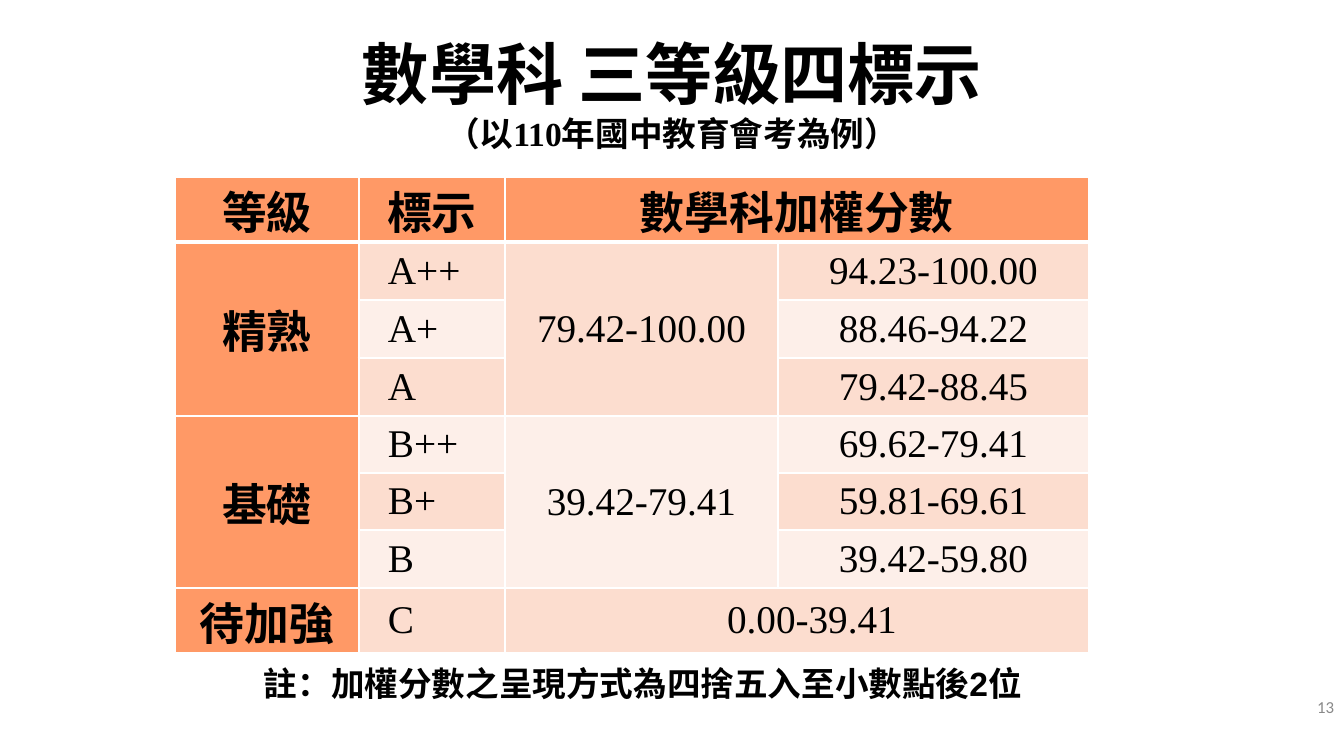
from pptx import Presentation
from pptx.dml.color import RGBColor
from pptx.enum.text import MSO_ANCHOR, MSO_AUTO_SIZE, PP_ALIGN
from pptx.oxml import parse_xml
from pptx.oxml.ns import nsdecls
from pptx.util import Emu, Pt

CJK, SERIF = "Noto Sans CJK SC", "Times New Roman"
BLACK, GREY, WHITE = "000000", "898989", "FFFFFF"
ORANGE, BANDS = "FF9966", ("FDEFE9", "FCDDCF")

TITLE = "數學科 三等級四標示"
SUBTITLE = [("（以", CJK), ("110", SERIF), ("年國中教育會考為例）", CJK)]
NOTE = "註：加權分數之呈現方式為四捨五入至小數點後2位"
PAGE_NUMBER = "13"

GRADES = [
    ["等級", "標示", "數學科加權分數", ""],
    ["精熟", "A++", "79.42-100.00", "94.23-100.00"],
    ["", "A+", "", "88.46-94.22"],
    ["", "A", "", "79.42-88.45"],
    ["基礎", "B++", "39.42-79.41", "69.62-79.41"],
    ["", "B+", "", "59.81-69.61"],
    ["", "B", "", "39.42-59.80"],
    ["待加強", "C", "0.00-39.41", ""],
]
MERGES = [  # first row, first column, last row, last column
    (0, 2, 0, 3), (1, 0, 3, 0), (1, 2, 3, 2),
    (4, 0, 6, 0), (4, 2, 6, 2), (7, 2, 7, 3),
]
COLUMN_WIDTHS = [184, 146, 273, 311]
ROW_HEIGHTS = [58, 58, 58, 58, 57, 57, 58, 58]
COLUMN_EDGES = [1, 2.25, 2.25, 1, 1]  # border widths in points
ROW_EDGES = [1, 3, 1, 1, 2.25, 1, 1, 2.25, 1]


def px(length):
    return Emu(round(length * 914400 / 100.8))


def color(value):
    return RGBColor.from_string(value)


def add_run(paragraph, text, size, font, bold=False, fill=BLACK):
    run = paragraph.add_run()
    run.text = text
    run.font.size = Pt(size)
    run.font.name = font
    run.font.bold = bold
    run.font.color.rgb = color(fill)
    run._r.get_or_add_rPr().find("{*}latin").addnext(
        parse_xml(f'<a:ea {nsdecls("a")} typeface="{CJK}"/>'))


def add_text_box(slide, left, top, width, height):
    frame = slide.shapes.add_textbox(px(left), px(top), px(width), px(height)).text_frame
    frame.word_wrap = True
    return frame


def set_borders(cell, widths):
    """Draw white borders; widths holds points for left, right, top, bottom."""
    properties = cell._tc.get_or_add_tcPr()
    for position, (side, width) in enumerate(zip("LRTB", widths)):
        properties.insert(position, parse_xml(
            f'<a:ln{side} {nsdecls("a")} w="{Pt(width)}"><a:solidFill>'
            f'<a:srgbClr val="{WHITE}"/></a:solidFill></a:ln{side}>'))


def add_title(slide):
    title = slide.shapes.title
    title.left, title.top, title.width, title.height = map(px, (67, 30, 1210, 126))
    frame = title.text_frame
    frame.auto_size = MSO_AUTO_SIZE.NONE
    frame.vertical_anchor = MSO_ANCHOR.MIDDLE
    paragraph = frame.paragraphs[0]
    paragraph.alignment = PP_ALIGN.CENTER
    add_run(paragraph, TITLE, 48, CJK, bold=True)
    paragraph.add_line_break()
    for text, font in SUBTITLE:
        add_run(paragraph, text, 24, font, bold=True)


def fill_cell(cell, row, column):
    is_heading = row == 0 or column == 0
    cell.fill.solid()
    cell.fill.fore_color.rgb = color(ORANGE if is_heading else BANDS[row % 2])
    if cell.is_spanned:
        return
    below = row + (cell.span_height if cell.is_merge_origin else 1)
    beyond = column + (cell.span_width if cell.is_merge_origin else 1)
    set_borders(cell, (COLUMN_EDGES[column], COLUMN_EDGES[beyond],
                       ROW_EDGES[row], ROW_EDGES[below]))
    cell.vertical_anchor = MSO_ANCHOR.MIDDLE
    cell.margin_left = cell.margin_right = px(2)
    cell.margin_top = cell.margin_bottom = 0
    paragraph = cell.text_frame.paragraphs[0]
    if column == 1 and not is_heading:
        paragraph._p.get_or_add_pPr().set("marL", str(px(27)))
    else:
        paragraph.alignment = PP_ALIGN.CENTER
    if row == len(GRADES) - 1 and column == 2:
        paragraph._p.get_or_add_pPr().set("indent", str(px(30)))
    if is_heading:
        add_run(paragraph, GRADES[row][column], 32, "Arial", bold=True)
    else:
        add_run(paragraph, GRADES[row][column], 28, SERIF)


def add_grade_table(slide):
    table = slide.shapes.add_table(
        len(ROW_HEIGHTS), len(COLUMN_WIDTHS), px(175), px(177),
        px(sum(COLUMN_WIDTHS)), px(sum(ROW_HEIGHTS))).table
    for column, width in zip(table.columns, COLUMN_WIDTHS):
        column.width = px(width)
    for row, height in zip(table.rows, ROW_HEIGHTS):
        row.height = px(height)
    for top, left, bottom, right in MERGES:
        table.cell(top, left).merge(table.cell(bottom, right))
    for row in range(len(ROW_HEIGHTS)):
        for column in range(len(COLUMN_WIDTHS)):
            fill_cell(table.cell(row, column), row, column)


def main():
    presentation = Presentation()
    presentation.slide_width, presentation.slide_height = px(1344), px(756)
    slide = presentation.slides.add_slide(presentation.slide_layouts[5])
    add_title(slide)
    add_grade_table(slide)

    number_frame = add_text_box(slide, 1032, 687, 312, 40)
    number_frame.vertical_anchor = MSO_ANCHOR.MIDDLE
    number_frame.paragraphs[0].alignment = PP_ALIGN.RIGHT
    add_run(number_frame.paragraphs[0], PAGE_NUMBER, 12, "Calibri", fill=GREY)

    note_frame = add_text_box(slide, 254, 658, 837, 50)
    add_run(note_frame.paragraphs[0], NOTE, 24, "Arial", bold=True)
    presentation.save("out.pptx")


if __name__ == "__main__":
    main()
